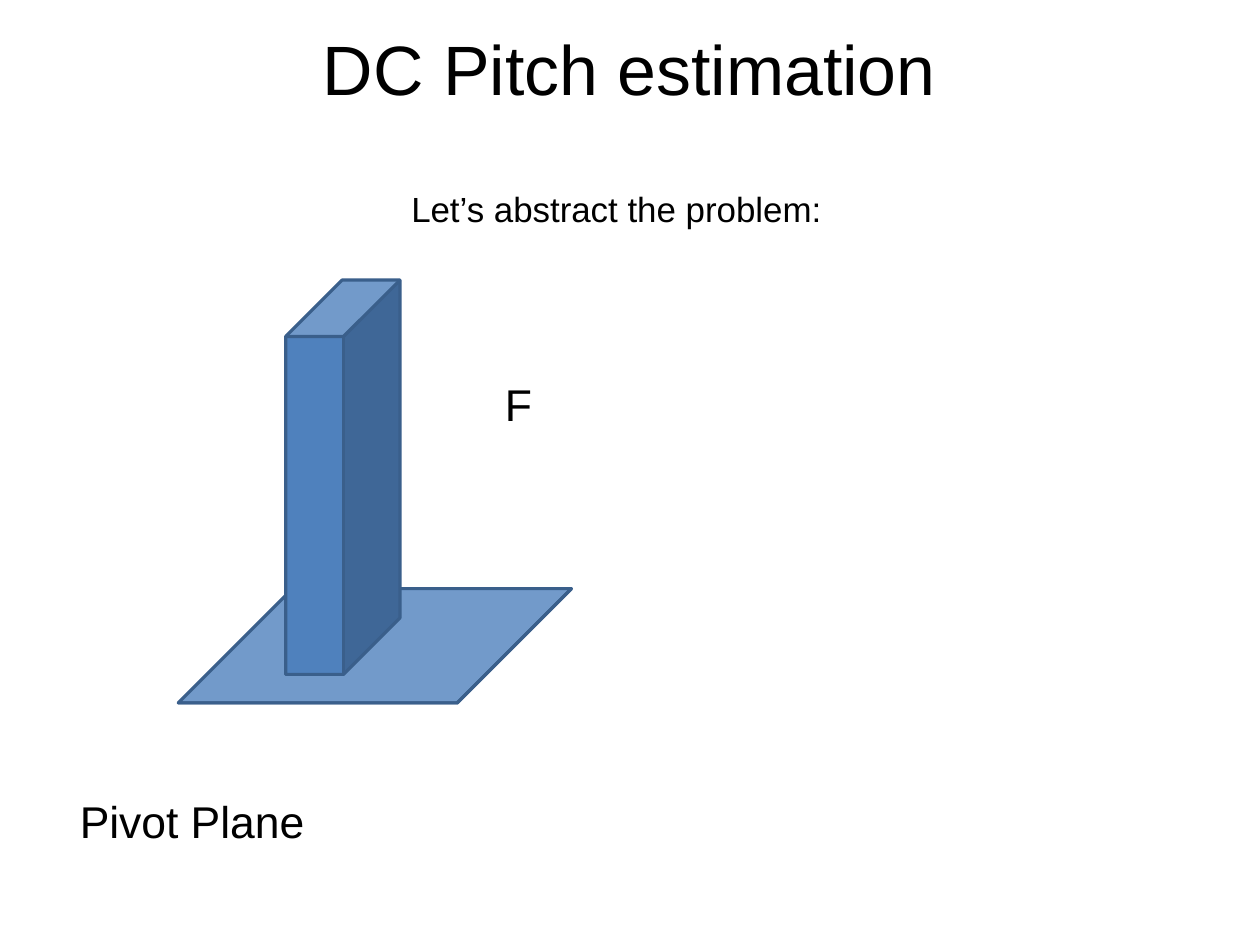
from pptx import Presentation
from pptx.dml.color import RGBColor
from pptx.enum.shapes import MSO_SHAPE
from pptx.enum.text import MSO_ANCHOR, MSO_AUTO_SIZE, PP_ALIGN
from pptx.util import Cm, Inches, Pt


def color(code):
    return RGBColor.from_string(code)


def style(frame, text, size):
    frame.word_wrap = True
    frame.auto_size = MSO_AUTO_SIZE.NONE
    para = frame.paragraphs[0]
    para.text = text
    para.font.name = "Arial"
    para.font.size = Pt(size)
    para.font.color.rgb = color("000000")
    return para


deck = Presentation()
deck.slide_width, deck.slide_height = Cm(28), Cm(21)
slide = deck.slides.add_slide(deck.slide_layouts[5])

# Title
title = slide.shapes.title
title.left, title.top = Inches(0.55), Inches(-0.1)
title.width, title.height = Inches(9.92), Inches(1.38)
frame = title.text_frame
frame.margin_left = frame.margin_right = 0
frame.margin_top = frame.margin_bottom = 0
frame.vertical_anchor = MSO_ANCHOR.MIDDLE
style(frame, "DC Pitch estimation", 44).alignment = PP_ALIGN.CENTER

# Pivot plane (a cube with no front height) and the block standing on it
cubes = [
    ((1.56, 5.15, 3.44, 1), 1),
    ((2.5, 2.45, 1, 3.45), 0.494),
]
for place, depth in cubes:
    cube = slide.shapes.add_shape(MSO_SHAPE.CUBE, *map(Inches, place))
    cube.adjustments[0] = depth
    cube.shadow.inherit = False
    cube.fill.solid()
    cube.fill.fore_color.rgb = color("4F81BD")
    cube.line.color.rgb = color("3A5F8B")
    cube.line.width = Pt(2)

# Labels
labels = [
    ("F", 28, (4.32, 3.25, 0.4, 0.53)),
    ("Let’s abstract the problem:", 22, (3.5, 1.59, 4.6, 0.44)),
    ("Pivot Plane", 28, (0.6, 6.9, 2.4, 0.53)),
]
for text, size, place in labels:
    box = slide.shapes.add_textbox(*map(Inches, place))
    style(box.text_frame, text, size)

deck.save("out.pptx")
